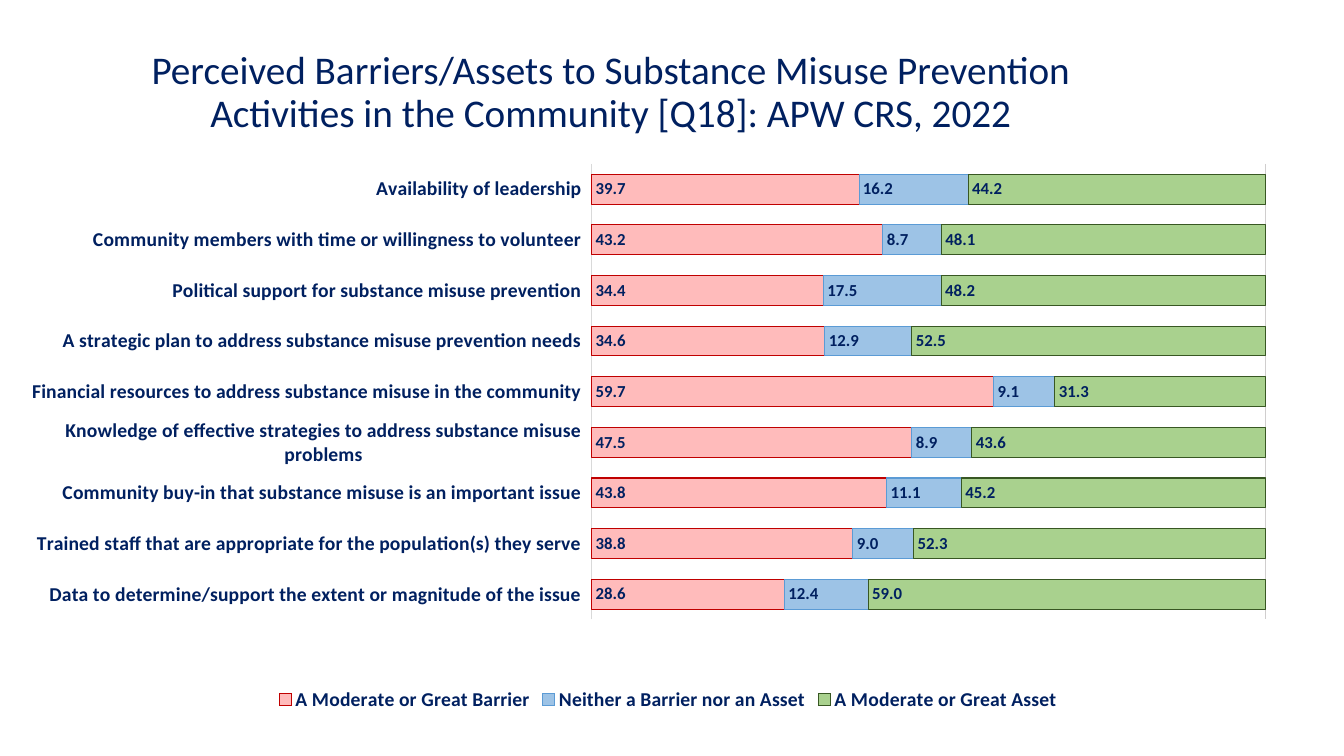
from lxml import etree
from pptx import Presentation
from pptx.chart.data import CategoryChartData
from pptx.dml.color import RGBColor
from pptx.enum.chart import XL_CHART_TYPE as ChartType
from pptx.enum.chart import XL_LABEL_POSITION as LabelPosition
from pptx.enum.chart import XL_LEGEND_POSITION as LegendPosition
from pptx.enum.chart import XL_TICK_LABEL_POSITION as TickLabelPosition
from pptx.enum.chart import XL_TICK_MARK as TickMark
from pptx.enum.text import MSO_ANCHOR, MSO_AUTO_SIZE, PP_ALIGN
from pptx.oxml.ns import qn
from pptx.util import Cm, Pt

FONT = "Calibri"
NAVY = RGBColor(0x00, 0x20, 0x60)
BLACK = RGBColor(0x00, 0x00, 0x00)
AXIS_GREY = RGBColor(0xD9, 0xD9, 0xD9)
GRID_GREY = RGBColor(0xD0, 0xCE, 0xCE)
PINK = RGBColor(0xFF, 0x8F, 0x8F)
DARK_RED = RGBColor(0xC0, 0x00, 0x00)
LIGHT_BLUE = RGBColor(0x9D, 0xC3, 0xE6)
BLUE = RGBColor(0x5B, 0x9B, 0xD5)
LIGHT_GREEN = RGBColor(0xA9, 0xD1, 0x8E)
DARK_GREEN = RGBColor(0x38, 0x57, 0x23)

TITLE = ("Perceived Barriers/Assets to Substance Misuse Prevention "
         "Activities in the Community [Q18]: APW CRS, 2022")
SERIES_NAMES = ("A Moderate or Great Barrier",
                "Neither a Barrier nor an Asset",
                "A Moderate or Great Asset")
SERIES_STYLES = ((PINK, DARK_RED, 60),
                 (LIGHT_BLUE, BLUE, 100),
                 (LIGHT_GREEN, DARK_GREEN, 100))
RATINGS = (
    ("Data to determine/support the extent or magnitude of the issue", 28.6, 12.4, 59.0),
    ("Trained staff that are appropriate for the population(s) they serve", 38.8, 9.0, 52.3),
    ("Community buy-in that substance misuse is an important issue", 43.8, 11.1, 45.2),
    ("Knowledge of effective strategies to address substance misuse problems", 47.5, 8.9, 43.6),
    ("Financial resources to address substance misuse in the community", 59.7, 9.1, 31.3),
    ("A strategic plan to address substance misuse prevention needs", 34.6, 12.9, 52.5),
    ("Political support for substance misuse prevention", 34.4, 17.5, 48.2),
    ("Community members with time or willingness to volunteer", 43.2, 8.7, 48.1),
    ("Availability of leadership", 39.7, 16.2, 44.2),
)


def set_font(font, size, color=NAVY, bold=True):
    font.name = FONT
    font.size = Pt(size)
    font.bold = bold
    font.color.rgb = color


def set_line(line, color):
    line.color.rgb = color
    line.width = Pt(0.75)


def set_title(slide):
    title = slide.shapes.title
    title.left, title.top, title.width, title.height = Cm(2.31), Cm(0.51), Cm(26.16), Cm(3.68)
    frame = title.text_frame
    frame.text = TITLE
    frame.word_wrap = True
    frame.auto_size = MSO_AUTO_SIZE.NONE
    frame.vertical_anchor = MSO_ANCHOR.MIDDLE
    paragraph = frame.paragraphs[0]
    paragraph.alignment = PP_ALIGN.CENTER
    paragraph.line_spacing = 0.9
    set_font(paragraph.font, 28, bold=False)


def add_ratings_chart(slide):
    data = CategoryChartData(number_format="0.0")
    categories, *columns = zip(*RATINGS)
    data.categories = categories
    for name, values in zip(SERIES_NAMES, columns):
        data.add_series(name, values)
    chart = slide.shapes.add_chart(ChartType.BAR_STACKED_100, Cm(0.81), Cm(2.92),
                                   Cm(32.05), Cm(15.11), data).chart
    chart.has_title = False
    set_font(chart.font, 10, BLACK, bold=False)
    return chart


def format_axes(chart):
    category_axis = chart.category_axis
    category_axis.major_tick_mark = TickMark.NONE
    category_axis.minor_tick_mark = TickMark.NONE
    category_axis.tick_label_position = TickLabelPosition.LOW
    set_font(category_axis.tick_labels.font, 14)
    set_line(category_axis.format.line, AXIS_GREY)

    value_axis = chart.value_axis
    value_axis.visible = False
    value_axis.minimum_scale = 0
    value_axis.maximum_scale = 1
    value_axis.major_unit = 1
    value_axis.has_major_gridlines = True
    set_line(value_axis.major_gridlines.format.line, GRID_GREY)


def format_series(series, fill_color, line_color, opacity):
    fill = series.format.fill
    fill.solid()
    fill.fore_color.rgb = fill_color
    if opacity < 100:
        color = series._element.find(".//" + qn("a:solidFill"))[0]
        etree.SubElement(color, qn("a:alpha"), val=str(opacity * 1000))
    set_line(series.format.line, line_color)
    labels = series.data_labels
    labels.show_value = True
    labels.position = LabelPosition.INSIDE_BASE
    labels.number_format = "0.0"
    labels.number_format_is_linked = False
    set_font(labels.font, 12)


def add_legend(chart):
    chart.has_legend = True
    chart.legend.position = LegendPosition.BOTTOM
    chart.legend.include_in_layout = False
    set_font(chart.legend.font, 14)


def place_plot(chart, x, y, width, height):
    plot_area = chart._chartSpace.find(".//" + qn("c:plotArea"))
    for existing in plot_area.findall(qn("c:layout")):
        plot_area.remove(existing)
    layout = etree.Element(qn("c:layout"))
    manual = etree.SubElement(layout, qn("c:manualLayout"))
    settings = (("layoutTarget", "inner"), ("xMode", "edge"), ("yMode", "edge"),
                ("x", x), ("y", y), ("w", width), ("h", height))
    for name, value in settings:
        etree.SubElement(manual, qn(f"c:{name}"), val=str(value))
    plot_area.insert(0, layout)


def main():
    presentation = Presentation()
    presentation.slide_width = Cm(33.87)
    presentation.slide_height = Cm(19.05)
    slide = presentation.slides.add_slide(presentation.slide_layouts[5])
    set_title(slide)
    chart = add_ratings_chart(slide)
    format_axes(chart)
    plot = chart.plots[0]
    plot.gap_width = 70
    plot.overlap = 100
    plot.vary_by_categories = False
    for series, style in zip(plot.series, SERIES_STYLES):
        format_series(series, *style)
    add_legend(chart)
    place_plot(chart, 0.44, 0.08, 0.53, 0.76)
    presentation.save("out.pptx")


if __name__ == "__main__":
    main()
